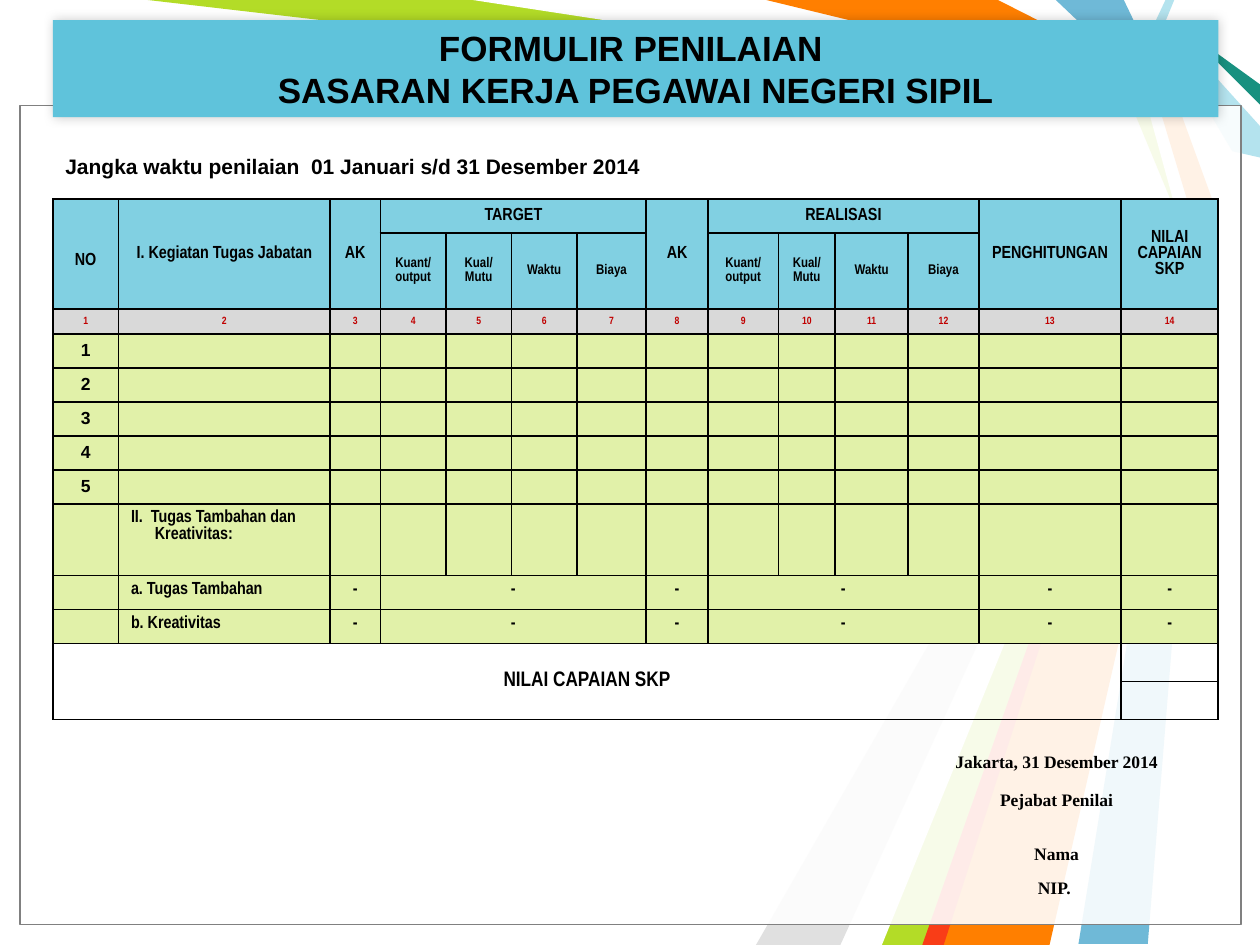
from lxml import etree
from pptx import Presentation
from pptx import util as u
from pptx.dml.color import RGBColor
from pptx.enum import shapes, text
from pptx.oxml.ns import qn

COLORS = {
    "black": "000000", "white": "FFFFFF", "red": "C00000", "border": "808080",
    "title": "5FC3DB", "header": "81D0E2", "numbers": "D9D9D9", "body": "E1F1A9",
    "blue": "6FB9D7", "lime": "B3DC27", "grey": "E0E0E0", "pale": "B4E3EE",
    "teal": "189180", "orange": "FF7F00", "scarlet": "F93D17",
}
RIBBONS = [
    ("blue", [(8.92, 0), (9.29, 0.77), (9.58, 1.67), (9.11, 7.49), (8.56, 7.49),
              (9.5, 1.67), (9.17, 0.75), (8.38, 0)]),
    ("lime", [(1.17, 0), (3.83, 0), (9.14, 0.78), (9.42, 1.69), (7.42, 7.5),
              (6.92, 7.5), (9.35, 1.73), (9.01, 0.91)]),
    ("grey", [(6.67, 7.5), (9.27, 1.81), (6, 7.5)]),
    ("white", [(3.75, 0), (9.1, 0.82), (9.32, 1.62), (6.75, 7.5), (7, 7.5),
               (9.41, 1.58), (9.17, 0.75), (6, 0)]),
    ("pale", [(9.25, 0), (9.17, 0.17), (9.78, 1.2), (10, 1.25), (10, 1),
              (9.25, 0.17), (9.32, 0)]),
    ("teal", [(10, 0.83), (9.42, 0.25), (10, 0.67)]),
    ("orange", [(6.08, 0), (7.92, 0), (9.3, 0.7), (9.66, 1.69), (8.33, 7.5),
                (7.33, 7.5), (9.42, 1.58), (9.17, 0.75)]),
    ("scarlet", [(7.32, 7.5), (9.32, 1.83), (7.49, 7.5)]),
]
TITLE = ["FORMULIR PENILAIAN ", "SASARAN KERJA PEGAWAI NEGERI SIPIL"]
PERIOD = "Jangka waktu penilaian  01 Januari s/d 31 Desember 2014"
SIGNATURE = ["Jakarta, 31 Desember 2014", "Pejabat Penilai", "Nama", "NIP. "]
SIGNATURE_ROWS = [0.3, 0.43, 0.27, 0.27]

COLUMNS = [0.52, 1.68, 0.4, 0.52, 0.52, 0.52, 0.55, 0.49, 0.56, 0.45, 0.58, 0.56, 1.13, 0.77]
ROWS = [0.27, 0.6, 0.2] + [0.27] * 5 + [0.57, 0.27, 0.27, 0.3, 0.3]
HEADINGS = {0: "NO", 1: "I. Kegiatan Tugas Jabatan", 2: "AK", 3: "TARGET", 7: "AK",
            8: "REALISASI", 12: "PENGHITUNGAN", 13: "NILAI\nCAPAIAN\nSKP"}
MEASURES = ["Kuant/ output", "Kual/ Mutu", "Waktu", "Biaya"]
GROUP_STARTS = [3, 8]
EXTRA_TASKS = {9: "a. Tugas Tambahan", 10: "b. Kreativitas"}
EXTRA_HEADING = "II.  Tugas Tambahan dan\nKreativitas:"
TOTAL = "NILAI CAPAIAN SKP"
NO_STYLE = "{2D5ABB26-0587-4C30-8999-92F81FD0307C}"
CENTER, LEFT = text.PP_ALIGN.CENTER, text.PP_ALIGN.LEFT
MIDDLE, TOP = text.MSO_ANCHOR.MIDDLE, text.MSO_ANCHOR.TOP


def rgb(name):
    return RGBColor.from_string(COLORS[name])


def paint(shape, fill, line=None):
    shape.shadow.inherit = False
    shape.fill.solid()
    shape.fill.fore_color.rgb = rgb(fill)
    if line:
        shape.line.color.rgb = rgb(line)
        shape.line.width = u.Pt(0.75)
    else:
        shape.line.fill.background()


def write(frame, lines, size, font="Arial", color="black", align=CENTER):
    frame.word_wrap = True
    for index, line in enumerate(lines):
        paragraph = frame.paragraphs[0] if index == 0 else frame.add_paragraph()
        paragraph.text = line
        paragraph.alignment = align
        paragraph.font.size = u.Pt(size)
        paragraph.font.name = font
        paragraph.font.bold = True
        paragraph.font.color.rgb = rgb(color)
        if not line:
            etree.SubElement(paragraph._p, qn("a:endParaRPr"), sz=str(size * 100))


def add_grid(slide, left, top, columns, rows):
    frame = slide.shapes.add_table(len(rows), len(columns), u.Inches(left), u.Inches(top),
                                   u.Inches(sum(columns)), u.Inches(sum(rows)))
    table = frame.table
    table.first_row = table.horz_banding = False
    next(frame._element.iter(qn("a:tableStyleId"))).text = NO_STYLE
    for column, width in zip(table.columns, columns):
        column.width = u.Inches(width)
    for row, height in zip(table.rows, rows):
        row.height = u.Inches(height)
    return table


def add_borders(cell):
    properties = cell._tc.get_or_add_tcPr()
    for side in ("lnL", "lnR", "lnT", "lnB"):
        line = etree.SubElement(properties, qn("a:" + side), w=str(u.Pt(1)))
        fill = etree.SubElement(line, qn("a:solidFill"))
        etree.SubElement(fill, qn("a:srgbClr"), val=COLORS["black"])


def cell_content(row, column):
    if row == 0:
        return HEADINGS.get(column, "")
    if row == 1:
        for start in GROUP_STARTS:
            if start <= column < start + len(MEASURES):
                return MEASURES[column - start]
    if row == 2:
        return str(column + 1)
    if 3 <= row <= 7 and column == 0:
        return str(row - 2)
    if row == 8 and column == 1:
        return EXTRA_HEADING
    if row in EXTRA_TASKS and column > 0:
        covered = any(start < column < start + len(MEASURES) for start in GROUP_STARTS)
        return EXTRA_TASKS[row] if column == 1 else "" if covered else "-"
    return TOTAL if (row, column) == (11, 0) else ""


def add_form(slide):
    table = add_grid(slide, 0.42, 1.58, COLUMNS, ROWS)
    sizes = {1: 8, 2: 6, 11: 12}
    for row in range(len(ROWS)):
        for column in range(len(COLUMNS)):
            cell = table.cell(row, column)
            add_borders(cell)
            if row > 10:
                cell.fill.background()
            else:
                cell.fill.solid()
                cell.fill.fore_color.rgb = rgb("header" if row < 2 else "numbers" if row == 2 else "body")
            cell.vertical_anchor = MIDDLE if row < 3 or row > 10 else TOP
            task = row >= 8 and column == 1
            cell.margin_left = cell.margin_right = u.Inches(0.1 if task else 0.08)
            write(cell.text_frame, cell_content(row, column).split("\n"), sizes.get(row, 10),
                  "Arial" if 3 <= row <= 7 else "Arial Narrow", "red" if row == 2 else "black",
                  LEFT if task else CENTER)
    table.cell(0, 0).margin_top = u.Inches(0.17)
    indented = table.cell(8, 1).text_frame.paragraphs[1]
    indented._p.get_or_add_pPr().set("marL", str(u.Inches(0.19)))

    merges = [(0, column, 1, column) for column in HEADINGS if column not in GROUP_STARTS]
    merges += [(row, start, row, start + 3) for row in (0, 9, 10) for start in GROUP_STARTS]
    merges.append((11, 0, 12, 12))
    for first_row, first_column, last_row, last_column in merges:
        table.cell(first_row, first_column).merge(table.cell(last_row, last_column))


def add_background(slide):
    for color, points in RIBBONS:
        corners = [(u.Inches(x), u.Inches(y)) for x, y in points]
        builder = slide.shapes.build_freeform(*corners[0])
        builder.add_line_segments(corners[1:], close=True)
        paint(builder.convert_to_shape(), color)
    panel = slide.shapes.add_shape(shapes.MSO_SHAPE.RECTANGLE, u.Inches(0.16), u.Inches(0.84),
                                   u.Inches(9.69), u.Inches(6.5))
    paint(panel, "white", "border")
    color = panel._element.spPr.find(qn("a:solidFill")).find(qn("a:srgbClr"))
    etree.SubElement(color, qn("a:alpha"), val="90000")


def add_title(slide):
    banner = slide.shapes.add_shape(shapes.MSO_SHAPE.RECTANGLE, u.Inches(0.42), u.Inches(0.16),
                                    u.Inches(9.25), u.Inches(0.77))
    paint(banner, "title")
    effects = banner._element.spPr.find(qn("a:effectLst"))
    shadow = etree.SubElement(effects, qn("a:outerShdw"), blurRad=str(u.Pt(6)), dist="0", dir="13500000")
    color = etree.SubElement(shadow, qn("a:srgbClr"), val=COLORS["black"])
    etree.SubElement(color, qn("a:alpha"), val="20000")
    banner.text_frame.vertical_anchor = MIDDLE
    write(banner.text_frame, TITLE, 20)

    period = slide.shapes.add_textbox(u.Inches(0.42), u.Inches(1.17), u.Inches(4.79), u.Inches(0.3))
    write(period.text_frame, [PERIOD], 12, align=LEFT)


def add_signature(slide):
    table = add_grid(slide, 3.51, 5.93, [3.5, 2.75], SIGNATURE_ROWS)
    for row, line in enumerate(SIGNATURE):
        for column, content in enumerate(["", line]):
            write(table.cell(row, column).text_frame, [content], 10, "Times New Roman")


def main():
    presentation = Presentation()
    presentation.slide_width, presentation.slide_height = u.Inches(10), u.Inches(7.5)
    slide = presentation.slides.add_slide(presentation.slide_layouts[6])
    add_background(slide)
    add_title(slide)
    add_form(slide)
    add_signature(slide)
    presentation.save("out.pptx")


if __name__ == "__main__":
    main()
